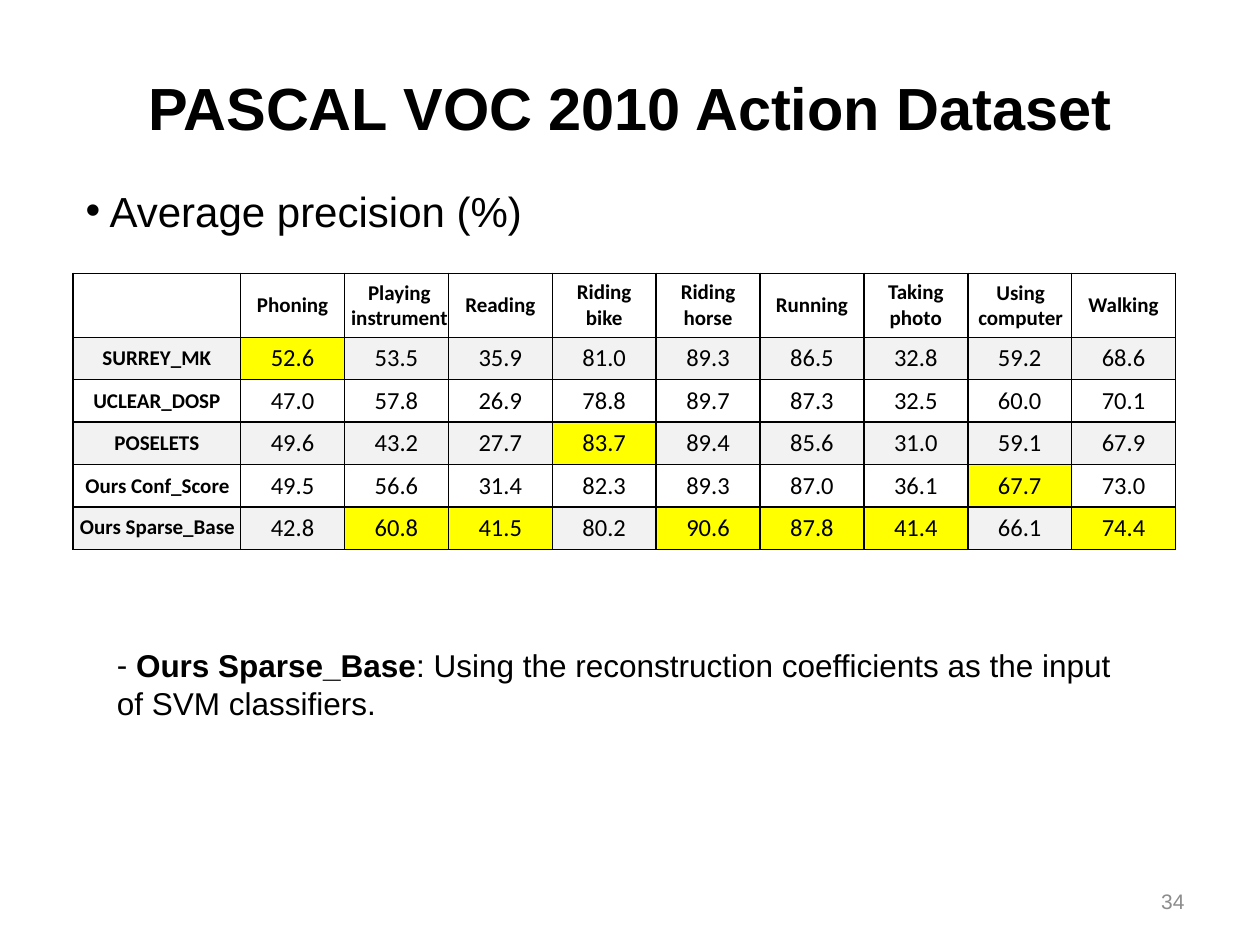
from lxml import etree
from pptx import Presentation
from pptx.dml.color import RGBColor
from pptx.enum.text import MSO_ANCHOR, MSO_AUTO_SIZE, PP_ALIGN
from pptx.oxml.ns import qn
from pptx.util import Inches, Pt

LEFT, CENTER, RIGHT = PP_ALIGN.LEFT, PP_ALIGN.CENTER, PP_ALIGN.RIGHT
TOP, MIDDLE = MSO_ANCHOR.TOP, MSO_ANCHOR.MIDDLE
FIXED = MSO_AUTO_SIZE.NONE
COLORS = {"ink": "000000", "mute": "8C8C8C", "band": "F2F2F2",
          "plain": "FFFFFF", "best": "FFFF00"}
HEADS = ["", "Phoning", "", "Reading", "Riding bike", "Riding horse",
         "Running", "Taking photo", "", "Walking"]
SCORES = [
    ("SURREY_MK", [52.6, 53.5, 35.9, 81.0, 89.3, 86.5, 32.8, 59.2, 68.6]),
    ("UCLEAR_DOSP", [47.0, 57.8, 26.9, 78.8, 89.7, 87.3, 32.5, 60.0, 70.1]),
    ("POSELETS", [49.6, 43.2, 27.7, 83.7, 89.4, 85.6, 31.0, 59.1, 67.9]),
    ("", [49.5, 56.6, 31.4, 82.3, 89.3, 87.0, 36.1, 67.7, 73.0]),
    ("", [42.8, 60.8, 41.5, 80.2, 90.6, 87.8, 41.4, 66.1, 74.4]),
]
LABELS = [
    ((2.67, 2.17, 1, 0.5), ["Playing", "instrument"]),
    ((7.64, 2.17, 0.92, 0.5), ["Using computer"]),
    ((0.5, 3.7, 1.5, 0.3), ["Ours Conf_Score"]),
    ((0.5, 4.03, 1.5, 0.3), ["Ours Sparse_Base"]),
]


class Deck:
    """Holds the style and the current slide, and adds each kind of element."""

    def __init__(self):
        self.show = Presentation()
        self.show.slide_width, self.show.slide_height = Inches(10), Inches(7.5)
        self.slide = self.show.slides.add_slide(self.show.slide_layouts[1])

    def fill_para(self, para, runs, size, face="Arial", color="ink", align=LEFT):
        para.alignment = align
        para.space_before = Pt(0)
        for text, bold in runs:
            run = para.add_run()
            run.text = text
            font = run.font
            font.name, font.size, font.bold = face, Pt(size), bold
            font.color.rgb = RGBColor.from_string(COLORS[color])

    def bullet(self, para, mark):
        props = para._p.get_or_add_pPr()
        props.set("marL", "0")
        props.set("indent", "0")
        etree.SubElement(props, qn("a:buFont")).set("typeface", "Arial")
        etree.SubElement(props, qn("a:buChar")).set("char", mark)

    def frame(self, shape, box, anchor=TOP):
        shape.left, shape.top, shape.width, shape.height = map(Inches, box)
        frame = shape.text_frame
        frame.word_wrap, frame.auto_size = True, FIXED
        frame.vertical_anchor = anchor
        return frame

    def title(self, text, box):
        frame = self.frame(self.slide.shapes.title, box, MIDDLE)
        self.fill_para(frame.paragraphs[0], [(text, True)], 34, align=CENTER)

    def body(self, text, box):
        para = self.frame(self.slide.placeholders[1], box).paragraphs[0]
        self.bullet(para, "•")
        self.fill_para(para, [(text, False)], 24)

    def text(self, lines, box, size, mark=None, anchor=TOP, **style):
        shape = self.slide.shapes.add_textbox(*map(Inches, box))
        frame = self.frame(shape, box, anchor)
        for i, runs in enumerate(lines):
            para = frame.add_paragraph() if i else frame.paragraphs[0]
            if mark:
                self.bullet(para, mark)
            self.fill_para(para, runs, size, **style)

    def cell(self, cell, text, fill, size=12, bold=True):
        cell.vertical_anchor = MIDDLE
        cell.margin_top = cell.margin_bottom = Inches(0.05)
        para = cell.text_frame.paragraphs[0]
        if text:
            self.fill_para(para, [(text, bold)], size, "Calibri", align=CENTER)
        else:
            end = etree.SubElement(para._p, qn("a:endParaRPr"))
            end.set("sz", str(size * 100))
        props = cell._tc.get_or_add_tcPr()
        for side in ("lnL", "lnR", "lnT", "lnB"):
            line = etree.SubElement(props, qn("a:" + side), w=str(Pt(1)))
            paint = etree.SubElement(line, qn("a:solidFill"))
            etree.SubElement(paint, qn("a:srgbClr"), val=COLORS["ink"])
        cell.fill.solid()
        cell.fill.fore_color.rgb = RGBColor.from_string(COLORS[fill])

    def table(self, heads, scores, box, first, top):
        width, height = box[2:]
        grid = self.slide.shapes.add_table(
            len(scores) + 1, len(heads), *map(Inches, box)).table
        for i, col in enumerate(grid.columns):
            col.width = Inches((width - first) / (len(heads) - 1) if i else first)
        for i, row in enumerate(grid.rows):
            row.height = Inches((height - top) / len(scores) if i else top)
        for i, head in enumerate(heads):
            self.cell(grid.cell(0, i), head, "plain")
        best = [max(col) for col in zip(*[vals for _, vals in scores])]
        for r, (name, vals) in enumerate(scores, 1):
            band = "band" if r % 2 else "plain"
            self.cell(grid.cell(r, 0), name, band)
            for c, (val, peak) in enumerate(zip(vals, best), 1):
                fill = "best" if val == peak else band
                self.cell(grid.cell(r, c), f"{val:.1f}", fill, 14, False)


def main():
    deck = Deck()
    deck.text([[("34", False)]], (7.17, 6.95, 2.33, 0.4), 12,
              anchor=MIDDLE, color="mute", align=RIGHT)
    deck.title("PASCAL VOC 2010 Action Dataset", (0.75, 0.5, 8.5, 0.7))
    deck.body(" Average precision (%)", (0.58, 1.42, 3.75, 0.5))
    deck.table(HEADS, SCORES, (0.58, 2.17, 8.75, 2.17), 1.33, 0.5)
    for box, lines in LABELS:
        deck.text([[(line, True)] for line in lines], box, 12,
                  face="Calibri", align=CENTER)
    deck.text([[(" ", False), ("Ours Sparse_Base", True),
                (": Using the reconstruction coefficients as the input"
                 " of SVM classifiers.", False)]],
              (0.83, 5.08, 8.33, 0.71), 18, mark="-")
    deck.show.save("out.pptx")


if __name__ == "__main__":
    main()
